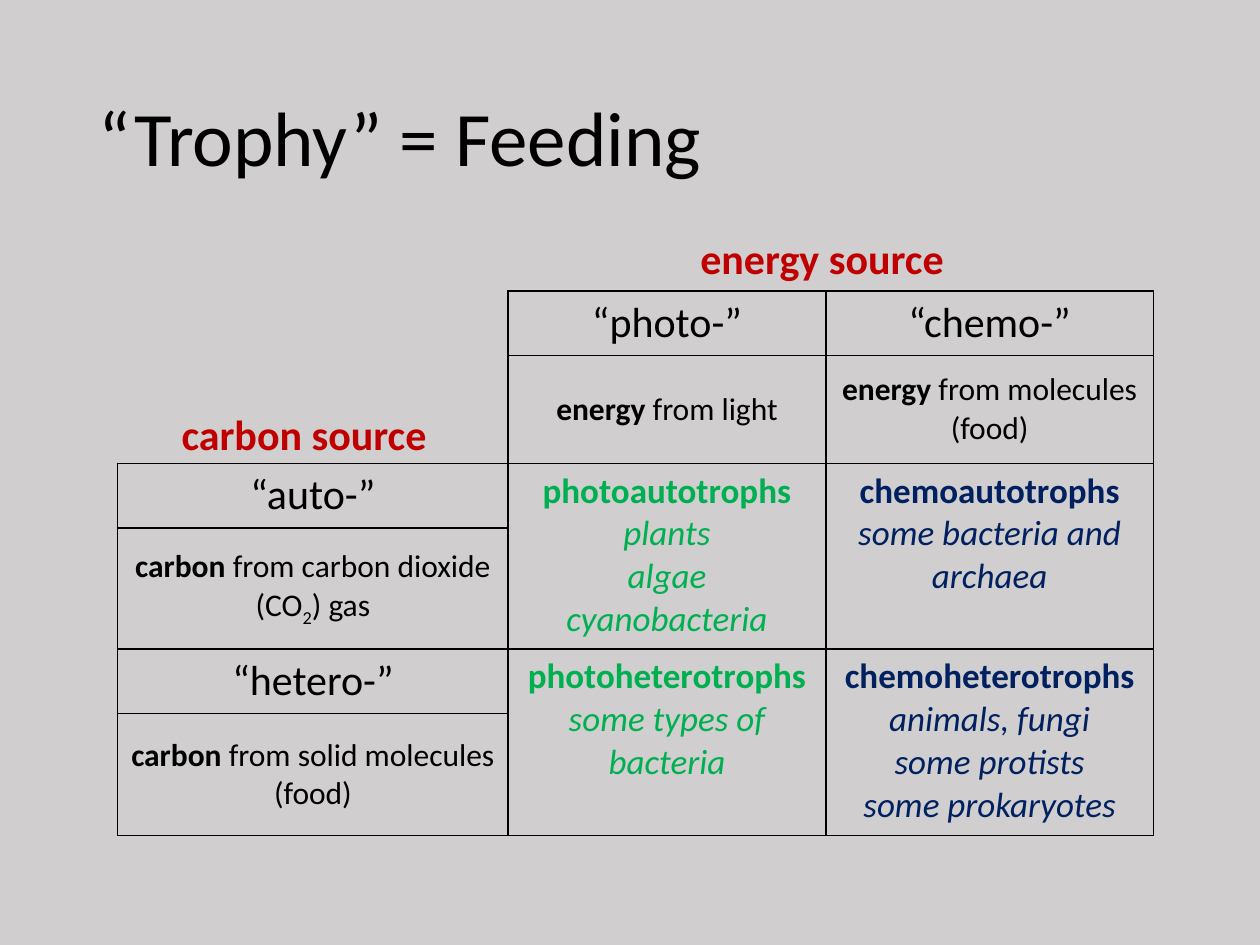
from lxml import etree
from pptx import Presentation
from pptx.dml.color import RGBColor
from pptx.enum.text import MSO_ANCHOR, PP_ALIGN
from pptx.oxml.ns import qn
from pptx.util import Pt

CENTER, LEFT = PP_ALIGN.CENTER, PP_ALIGN.LEFT
TOP, MIDDLE = MSO_ANCHOR.TOP, MSO_ANCHOR.MIDDLE
BLACK = RGBColor(0x00, 0x00, 0x00)
GREEN = RGBColor(0x00, 0xB0, 0x50)
NAVY = RGBColor(0x00, 0x20, 0x60)
RED = RGBColor(0xC0, 0x00, 0x00)
GRAY = RGBColor(0xD0, 0xCE, 0xCE)
FONT = "Calibri"

TITLE = "“Trophy” = Feeding"
AXIS_LABELS = [("carbon source", 88.5, 229.7), ("energy source", 384.5, 129.6)]
AXIS_SIZE = (170.6, 36)

COLUMN_WIDTHS = [223.2, 181.5, 187.3]
ROW_HEIGHTS = [36.8, 61.7, 36.8, 69.4, 36.8, 69.7]
TABLE_LEFT, TABLE_TOP = 67.2, 166.3

# (row, column): prefix
PREFIXES = {
    (0, 1): "“photo-”",
    (0, 2): "“chemo-”",
    (2, 0): "“auto-”",
    (4, 0): "“hetero-”",
}
# (row, column): bold keyword, then (text, baseline) pieces
MEANINGS = {
    (1, 1): ("energy", [(" from light", 0)]),
    (1, 2): ("energy", [(" from molecules (food)", 0)]),
    (3, 0): ("carbon", [(" from carbon dioxide (CO", 0), ("2", -25000), (") gas", 0)]),
    (5, 0): ("carbon", [(" from solid molecules (food)", 0)]),
}
# (row, column): colour, group name, example organisms
GROUPS = {
    (2, 1): (GREEN, "photoautotrophs", ["plants", "algae", "cyanobacteria"]),
    (2, 2): (NAVY, "chemoautotrophs", ["some bacteria and archaea"]),
    (4, 1): (GREEN, "photoheterotrophs", ["some types of bacteria"]),
    (4, 2): (NAVY, "chemoheterotrophs",
             ["animals, fungi", "some protists", "some prokaryotes"]),
}
CORNER = (0, 0)


def add_run(paragraph, text, size, color=BLACK, bold=False, italic=False, baseline=0):
    """Append one formatted run."""
    run = paragraph.add_run()
    run.text = text
    font = run.font
    font.name, font.size, font.bold, font.italic = FONT, Pt(size), bold, italic
    font.color.rgb = color
    if baseline:
        run._r.get_or_add_rPr().set("baseline", str(baseline))


def add_label(slide, text, box, size, color=BLACK, bold=False, align=CENTER, anchor=TOP):
    """Add a one-line text box and return its paragraph."""
    frame = slide.shapes.add_textbox(*map(Pt, box)).text_frame
    frame.word_wrap = True
    frame.vertical_anchor = anchor
    paragraph = frame.paragraphs[0]
    paragraph.alignment = align
    add_run(paragraph, text, size, color, bold)
    return paragraph


def set_borders(cell, visible):
    """Draw the named sides in black and hide the others."""
    properties = cell._tc.get_or_add_tcPr()
    for position, side in enumerate("LRTB"):
        line = etree.Element(qn(f"a:ln{side}"), w=str(Pt(1)))
        if side in visible:
            fill = etree.SubElement(line, qn("a:solidFill"))
            etree.SubElement(fill, qn("a:srgbClr"), val=str(BLACK))
        else:
            etree.SubElement(line, qn("a:noFill"))
        properties.insert(position, line)


def fill_cell(cell, lines, anchor=TOP):
    """Write centred paragraphs; each line is a list of add_run arguments."""
    cell.vertical_anchor = anchor
    frame = cell.text_frame
    for index, runs in enumerate(lines):
        paragraph = frame.add_paragraph() if index else frame.paragraphs[0]
        paragraph.alignment = CENTER
        for run in runs:
            add_run(paragraph, *run)


def add_trophy_table(slide):
    """Build the grid of energy source against carbon source."""
    table = slide.shapes.add_table(
        len(ROW_HEIGHTS), len(COLUMN_WIDTHS), Pt(TABLE_LEFT), Pt(TABLE_TOP),
        Pt(sum(COLUMN_WIDTHS)), Pt(sum(ROW_HEIGHTS))).table
    table.first_row = table.horz_banding = False
    for column, width in zip(table.columns, COLUMN_WIDTHS):
        column.width = Pt(width)
    for row, height in zip(table.rows, ROW_HEIGHTS):
        row.height = Pt(height)
    for row in range(len(ROW_HEIGHTS)):
        for column in range(len(COLUMN_WIDTHS)):
            cell = table.cell(row, column)
            cell.fill.background()
            in_corner = column == 0 and row < 2
            set_borders(cell, "RB" if in_corner else "LRTB")
    for row, column in [CORNER, *GROUPS]:
        table.cell(row, column).merge(table.cell(row + 1, column))
    for place, prefix in PREFIXES.items():
        fill_cell(table.cell(*place), [[(prefix, 24)]])
    for place, (keyword, pieces) in MEANINGS.items():
        runs = [(keyword, 18, BLACK, True)]
        runs += [(text, 18, BLACK, False, False, base) for text, base in pieces]
        fill_cell(table.cell(*place), [runs], MIDDLE)
    for place, (color, name, examples) in GROUPS.items():
        lines = [[(name, 20, color, True)]]
        lines += [[(example, 20, color, False, True)] for example in examples]
        fill_cell(table.cell(*place), lines)


presentation = Presentation()
presentation.slide_width, presentation.slide_height = Pt(720), Pt(540)
slide = presentation.slides.add_slide(presentation.slide_layouts[6])
slide.background.fill.solid()
slide.background.fill.fore_color.rgb = GRAY

title = add_label(slide, TITLE, (49.5, 28.8, 621, 104.4), 44, align=LEFT, anchor=MIDDLE)
title.line_spacing = 0.9
add_trophy_table(slide)
for text, left, top in AXIS_LABELS:
    add_label(slide, text, (left, top, *AXIS_SIZE), 24, RED, True)

presentation.save("out.pptx")
